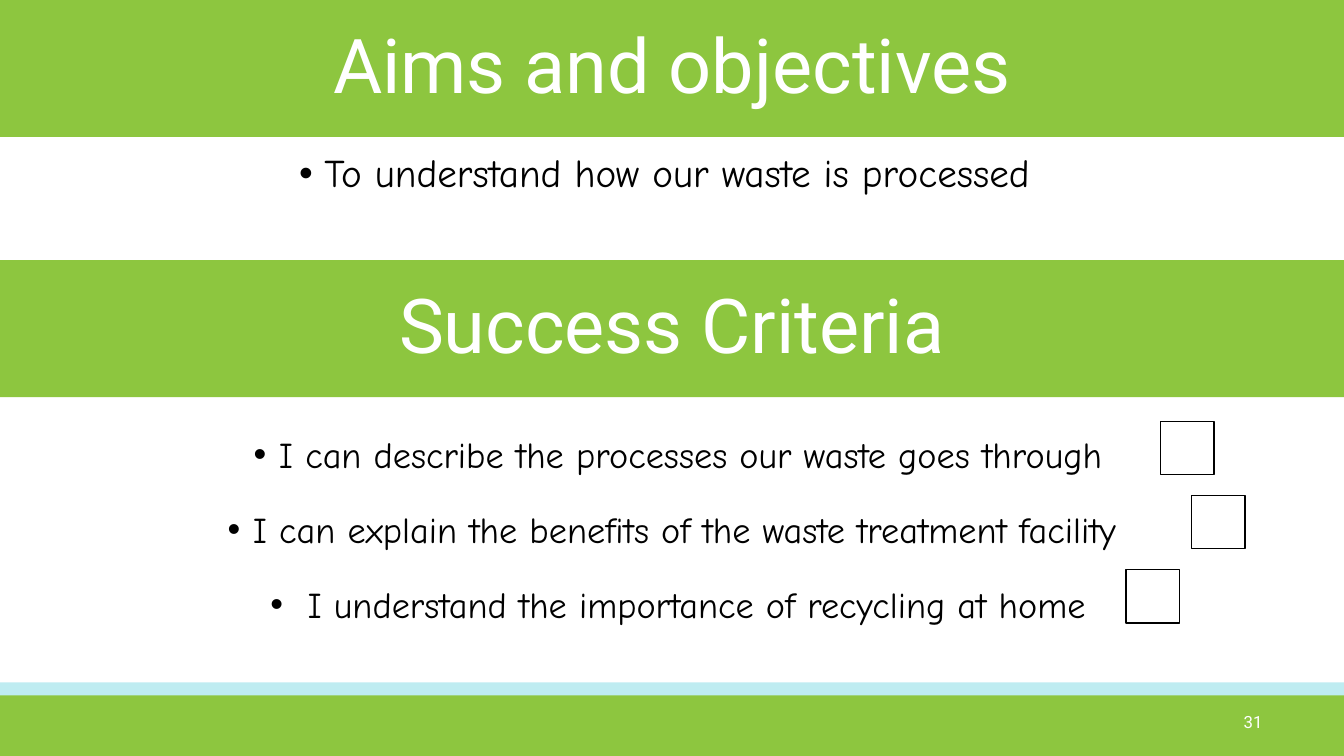
"""Build the aims and success criteria slide of a lesson on waste."""
import pptx
import pptx.dml.color
import pptx.enum.shapes
import pptx.enum.text
import pptx.oxml.ns
import pptx.util
from lxml import etree
from pptx.util import Inches

ALIGN = pptx.enum.text.PP_ALIGN
ANCHOR = pptx.enum.text.MSO_ANCHOR


class LessonSlide:
    """Hold the style and the current slide, and draw its elements."""

    colours = {"green": "8DC63F", "aqua": "20BFD0", "white": "FFFFFF", "black": "000000"}
    heading_font = "Roboto"
    body_font = "Comic Neue"
    width = 13.33

    def __init__(self, presentation):
        """Add a blank slide to the presentation."""
        self.slide = presentation.slides.add_slide(presentation.slide_layouts[6])

    def colour(self, name):
        """Return the named colour."""
        return pptx.dml.color.RGBColor.from_string(self.colours[name])

    def style(self, paragraph, font, size, colour, align):
        """Set the font and alignment of a paragraph."""
        paragraph.alignment = align
        paragraph.font.name = font
        paragraph.font.size = pptx.util.Pt(size)
        paragraph.font.color.rgb = self.colour(colour)

    def rectangle(self, left, top, width, height):
        """Add a rectangle without a shadow."""
        shape = self.slide.shapes.add_shape(
            pptx.enum.shapes.MSO_SHAPE.RECTANGLE,
            Inches(left), Inches(top), Inches(width), Inches(height))
        shape.shadow.inherit = False
        return shape

    def band(self, top, height, colour, heading=None, opacity=None):
        """Add a full-width band, with a heading or transparency if given."""
        shape = self.rectangle(0, top, self.width, height)
        shape.fill.solid()
        shape.fill.fore_color.rgb = self.colour(colour)
        shape.line.fill.background()
        if opacity is not None:
            tag = pptx.oxml.ns.qn("a:srgbClr")
            fill = next(shape.fill._xPr.iter(tag))
            etree.SubElement(fill, pptx.oxml.ns.qn("a:alpha"), val=str(opacity * 1000))
        if heading:
            shape.text_frame.vertical_anchor = ANCHOR.MIDDLE
            paragraph = shape.text_frame.paragraphs[0]
            paragraph.text = heading
            paragraph.line_spacing = 0.9
            self.style(paragraph, self.heading_font, 54, "white", ALIGN.CENTER)

    def text_box(self, left, top, width, height):
        """Add a wrapping text box and return its text frame."""
        box = self.slide.shapes.add_textbox(
            Inches(left), Inches(top), Inches(width), Inches(height))
        box.text_frame.word_wrap = True
        return box.text_frame

    def bullets(self, left, top, width, height, lines, size, spacing):
        """Add a centred bullet list."""
        frame = self.text_box(left, top, width, height)
        for index, line in enumerate(lines):
            paragraph = frame.add_paragraph() if index else frame.paragraphs[0]
            paragraph.text = line
            paragraph.line_spacing = spacing
            if index:
                paragraph.space_before = pptx.util.Pt(10)
            properties = paragraph._p.get_or_add_pPr()
            properties.set("marL", str(Inches(0.25)))
            properties.set("indent", str(Inches(-0.25)))
            etree.SubElement(properties, pptx.oxml.ns.qn("a:buFont"), typeface="Arial")
            etree.SubElement(properties, pptx.oxml.ns.qn("a:buChar"), char="•")
            self.style(paragraph, self.body_font, size, "black", ALIGN.CENTER)

    def page_number(self, number):
        """Add the page number at the bottom right."""
        frame = self.text_box(9.62, 6.96, 3, 0.4)
        frame.vertical_anchor = ANCHOR.MIDDLE
        frame.paragraphs[0].text = number
        self.style(frame.paragraphs[0], self.heading_font, 12, "white", ALIGN.RIGHT)

    def checkbox(self, left, top):
        """Add an empty tick box."""
        shape = self.rectangle(left, top, 0.53, 0.53)
        shape.fill.background()
        shape.line.color.rgb = self.colour("black")
        shape.line.width = pptx.util.Pt(1)


def main():
    """Build and save the slide."""
    presentation = pptx.Presentation()
    presentation.slide_width = Inches(LessonSlide.width)
    presentation.slide_height = Inches(7.5)
    lesson = LessonSlide(presentation)

    lesson.band(6.77, 0.24, "aqua", opacity=29)
    lesson.band(6.9, 0.6, "green")
    lesson.band(0, 1.36, "green", "Aims and objectives")
    lesson.bullets(0.92, 1.48, 11.34, 1, ["To understand how our waste is processed"], 28, 0.9)
    lesson.page_number("31")

    lesson.band(2.58, 1.36, "green", "Success Criteria")
    criteria = [
        "I can describe the processes our waste goes through",
        "I can explain the benefits of the waste treatment facility ",
        " I understand the importance of recycling at home",
    ]
    lesson.bullets(1.04, 4.07, 11.37, 2.27, criteria, 25.9, 1.4)
    for row, left in enumerate([11.51, 11.82, 11.17]):
        lesson.checkbox(left, 4.18 + row * 0.735)

    presentation.save("out.pptx")


if __name__ == "__main__":
    main()
